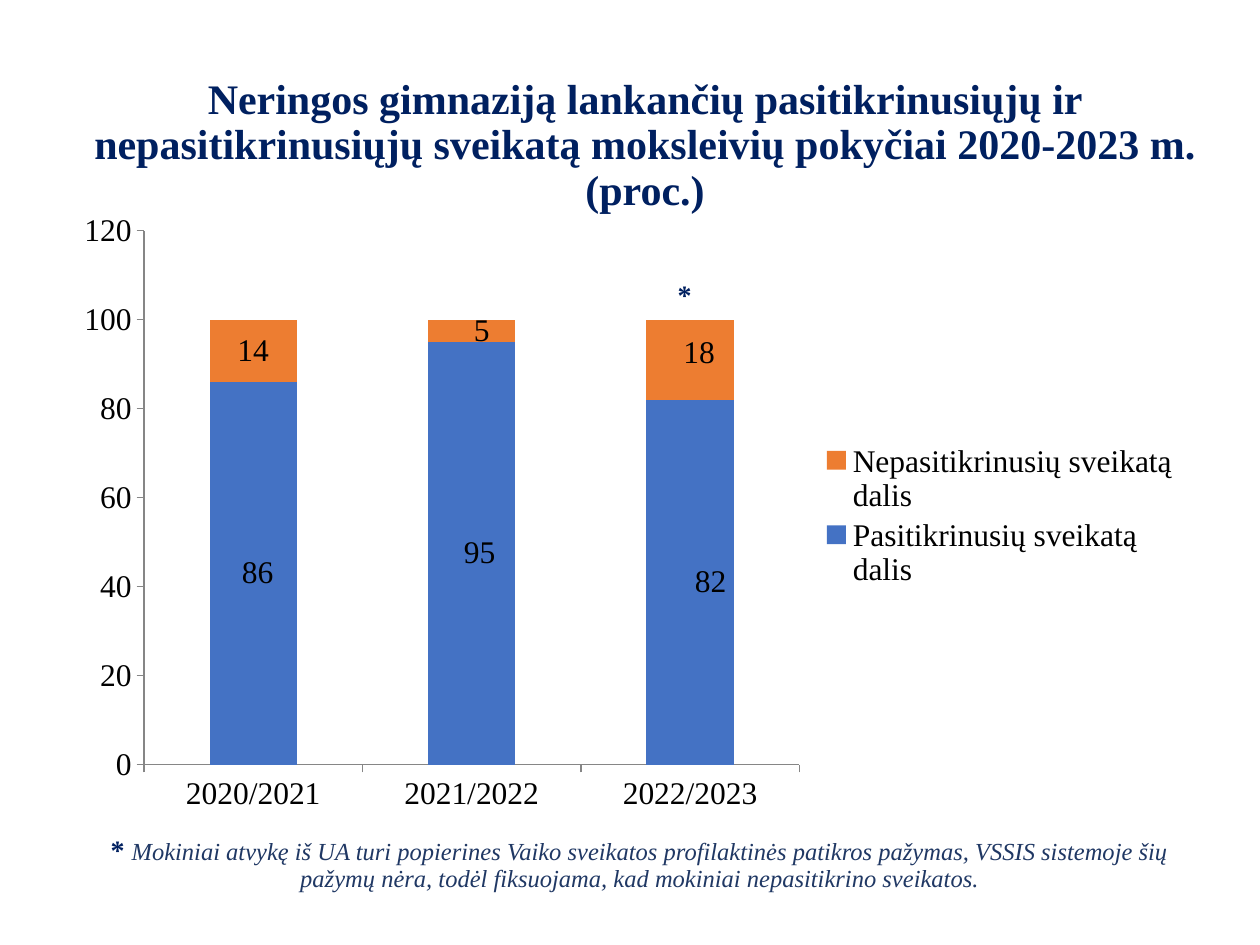
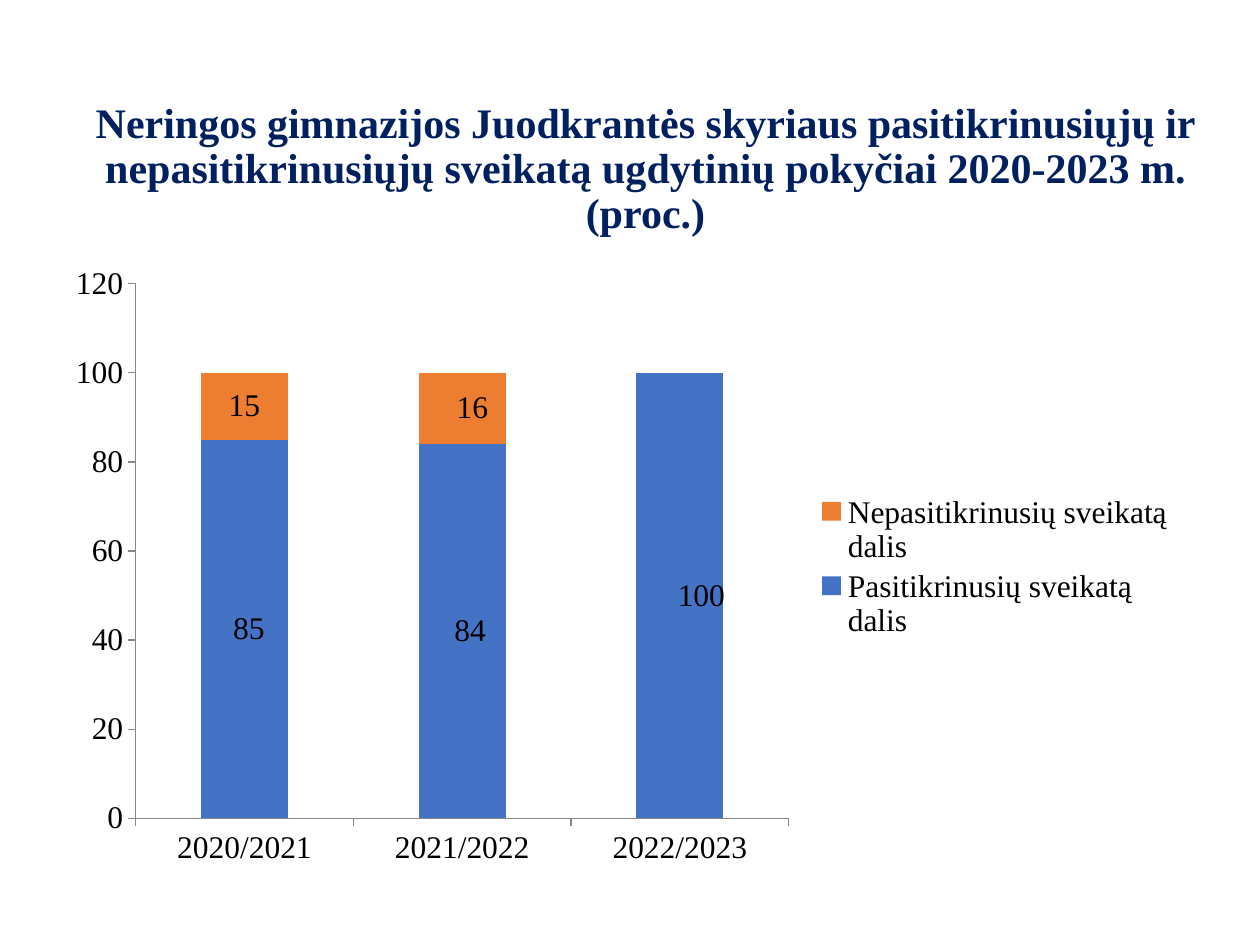
from lxml import etree
from pptx import Presentation
from pptx.chart.data import CategoryChartData
from pptx.dml.color import RGBColor
from pptx.enum import chart as kinds, text
from pptx.oxml import ns
from pptx.util import Emu, Pt

SCALE = 914400 / 126
FACE = "Times New Roman"
NAVY, SLATE, GREY, BLACK = "002060", "203864", "868686", "000000"
YEARS = ["2020/2021", "2021/2022", "2022/2023"]
SERIES = [("Pasitikrinusių sveikatą dalis", "4472C4"),
          ("Nepasitikrinusių sveikatą dalis", "ED7D31")]
WIDE, HIGH = 1134, 624
PLOT = (85, 27, 656, 534)


def px(*sizes):
    return [Emu(round(size * SCALE)) for size in sizes]


def tint(code):
    return RGBColor.from_string(code)


def style(font, size, code=BLACK, bold=False, italic=False):
    font.name, font.size = FACE, Pt(size)
    font.bold, font.italic = bold, italic
    font.color.rgb = tint(code)


def write(slide, box, anchor=text.MSO_ANCHOR.TOP):
    frame = slide.shapes.add_textbox(*px(*box)).text_frame
    frame.word_wrap = True
    frame.vertical_anchor = anchor
    para = frame.paragraphs[0]
    para.alignment = text.PP_ALIGN.CENTER
    para.line_spacing = 0.9
    return para


def title(slide, box, words):
    para = write(slide, box, text.MSO_ANCHOR.MIDDLE)
    para.text = words
    style(para.font, 24, NAVY, bold=True)


def star(slide, box):
    para = write(slide, box)
    para.text = "*"
    style(para.font, 16, NAVY, bold=True)


def note(slide, box, words):
    para = write(slide, box)
    mark, body = para.add_run(), para.add_run()
    mark.text, body.text = "* ", words
    style(mark.font, 16, NAVY, bold=True)
    style(body.font, 14, SLATE, italic=True)


def layout(**parts):
    root = etree.Element(ns.qn("c:layout"))
    manual = etree.SubElement(root, ns.qn("c:manualLayout"))
    for tag, value in parts.items():
        etree.SubElement(manual, ns.qn("c:" + tag)).set("val", str(value))
    return root


def place(plot, box):
    left, top, wide, high = box
    area = plot._element.getparent()
    for old in area.findall(ns.qn("c:layout")):
        area.remove(old)
    area.insert(0, layout(layoutTarget="inner", xMode="edge", yMode="edge",
                          x=round(left / WIDE, 3), y=round(top / HIGH, 3),
                          w=round(wide / WIDE, 3), h=round(high / HIGH, 3)))


def label(row, shifts):
    tags = row.data_labels
    tags.show_value = True
    style(tags.font, 18)
    for spot, (right, down) in shifts.items():
        style(row.points[spot].data_label.font, 18)
        tag = row._element.findall(".//" + ns.qn("c:dLbl"))[-1]
        tag.insert(1, layout(x=round(right / WIDE, 3), y=round(down / HIGH, 3)))


def bars(slide, spot, plot_box, values, shifts):
    data = CategoryChartData()
    data.categories = YEARS
    for (name, _), nums in zip(SERIES, values):
        data.add_series(name, nums)
    chart = slide.shapes.add_chart(kinds.XL_CHART_TYPE.COLUMN_STACKED,
                                   *px(*spot, WIDE, HIGH), data).chart
    style(chart.font, 18)
    chart.has_title = False
    chart.has_legend = True
    chart.legend.position = kinds.XL_LEGEND_POSITION.RIGHT
    chart.legend.include_in_layout = False
    style(chart.legend.font, 18)
    for axis in (chart.category_axis, chart.value_axis):
        axis.has_major_gridlines = False
        axis.major_tick_mark = kinds.XL_TICK_MARK.OUTSIDE
        axis.format.line.color.rgb = tint(GREY)
        axis.format.line.width = Pt(0.75)
        style(axis.tick_labels.font, 18)
    scale = chart.value_axis
    scale.minimum_scale, scale.maximum_scale, scale.major_unit = 0, 120, 20
    plot = chart.plots[0]
    plot.gap_width, plot.overlap = 150, 100
    plot.vary_by_categories = False
    for row, (_, code), moves in zip(plot.series, SERIES, shifts):
        row.format.fill.solid()
        row.format.fill.fore_color.rgb = tint(code)
        label(row, moves)
    place(plot, plot_box)


def school(slide):
    title(slide, (54, 67, 1182, 158),
          "Neringos gimnaziją lankančių pasitikrinusiųjų ir nepasitikrinusiųjų "
          "sveikatą moksleivių pokyčiai 2020-2023 m. (proc.)")
    bars(slide, (59, 204), PLOT, [(86, 95, 82), (14, 5, 18)],
         [{0: (5, 0), 1: (8, 0), 2: (20, 0)}, {1: (10, 0), 2: (9, -7)}])
    note(slide, (86, 830, 1108, 73),
         "Mokiniai atvykę iš UA turi popierines Vaiko sveikatos profilaktinės "
         "patikros pažymas, VSSIS sistemoje šių pažymų nėra, todėl fiksuojama, "
         "kad mokiniai nepasitikrino sveikatos.")
    star(slide, (607, 275, 155, 73))


def branch(slide):
    title(slide, (35, 91, 1221, 158),
          "Neringos gimnazijos Juodkrantės skyriaus pasitikrinusiųjų ir "
          "nepasitikrinusiųjų sveikatą ugdytinių pokyčiai 2020-2023 m. (proc.)")
    bars(slide, (54, 255), (82, 29, 653, 535), [(85, 84, 100), (15, 16, None)],
         [{0: (5, 0), 1: (8, 0), 2: (21, 0)}, {1: (10, 0)}])


def main():
    deck = Presentation()
    deck.slide_width, deck.slide_height = px(1260, 945)
    for build in (school, branch):
        build(deck.slides.add_slide(deck.slide_layouts[6]))
    deck.save("out.pptx")


if __name__ == "__main__":
    main()
